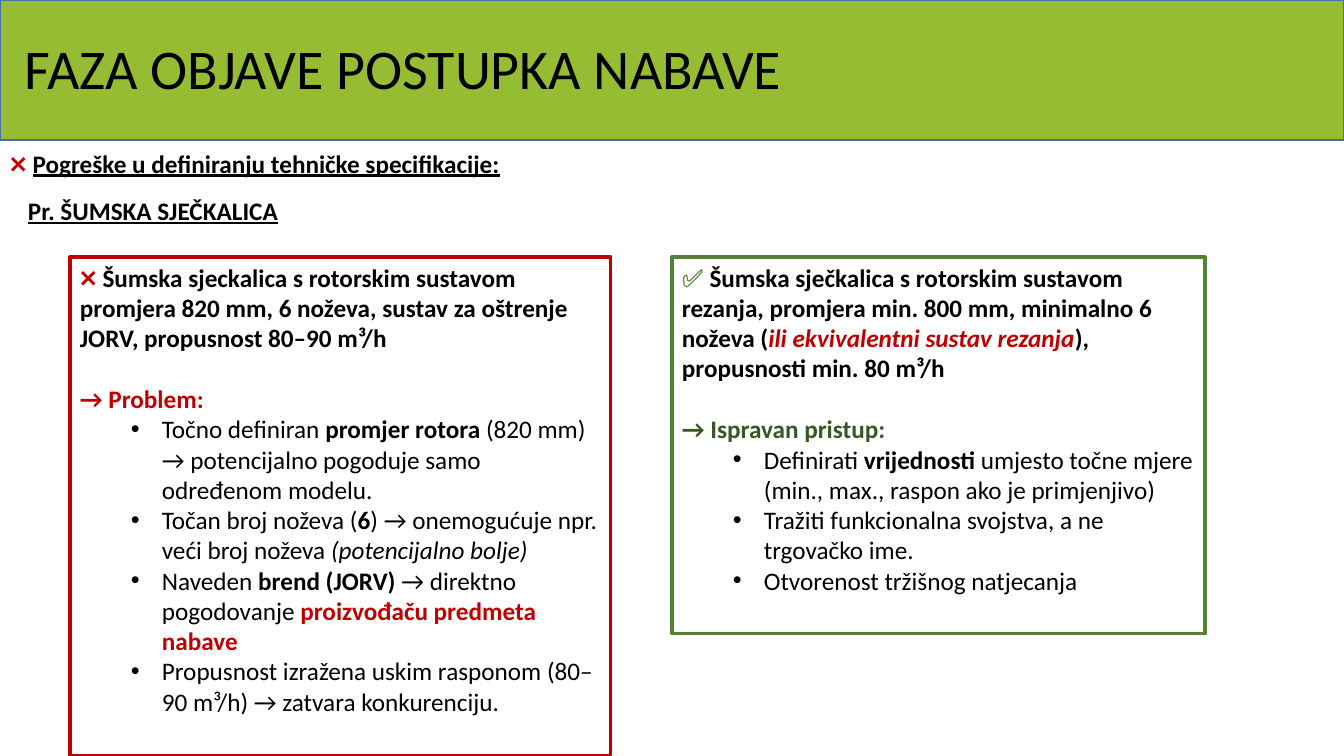
import pptx
import pptx.util
import pptx.dml.color
import pptx.enum.shapes
import pptx.enum.text
import pptx.oxml.ns
import lxml.etree

PX = 914400 / 100.8
FONT = "Calibri"
BLACK, RED, GREEN, DARK = "000000", "C00000", "548235", "385723"

TITLE = [("FAZA OBJAVE POSTUPKA NABAVE", "", BLACK)]
HEAD = [("❌ ", "b", RED),
        ("Pogreške u definiranju tehničke specifikacije:", "bu", BLACK)]
CASE = [("Pr. ŠUMSKA SJEČKALICA", "bu", BLACK)]

CARDS = [
    {
        "box": (70, 257, 541, 499),
        "line": RED,
        "lead": [("❌ ", "", RED),
                 ("Šumska sjeckalica s rotorskim sustavom promjera 820 mm, "
                  "6 noževa, sustav za oštrenje JORV, propusnost 80–90 m³/h", "b", BLACK)],
        "label": [("→ Problem:", "b", RED)],
        "items": [
            [("Točno definiran ", "", BLACK), ("promjer rotora", "b", BLACK),
             (" (820 mm) → potencijalno pogoduje samo određenom modelu.", "", BLACK)],
            [("Točan broj noževa (", "", BLACK), ("6", "b", BLACK),
             (") → onemogućuje npr. veći broj noževa ", "", BLACK),
             ("(potencijalno bolje)", "i", BLACK)],
            [("Naveden ", "", BLACK), ("brend (JORV)", "b", BLACK),
             (" → direktno pogodovanje ", "", BLACK),
             ("proizvođaču predmeta nabave", "b", RED)],
            [("Propusnost izražena uskim rasponom (80–90 m³/h) "
              "→ zatvara konkurenciju.", "", BLACK)],
        ],
    },
    {
        "box": (672, 257, 533, 377),
        "line": GREEN,
        "lead": [("✅ ", "", GREEN),
                 ("Šumska sječkalica s rotorskim sustavom rezanja, promjera "
                  "min. 800 mm, minimalno 6 noževa (", "b", BLACK),
                 ("ili ekvivalentni sustav rezanja", "bi", RED),
                 ("), propusnosti min. 80 m³/h", "b", BLACK)],
        "label": [("→ Ispravan pristup:", "b", DARK)],
        "items": [
            [("Definirati ", "", BLACK), ("vrijednosti ", "b", BLACK),
             ("umjesto točne mjere (min., max., raspon ako je primjenjivo)", "", BLACK)],
            [("Tražiti funkcionalna svojstva, a ne trgovačko ime.", "", BLACK)],
            [("Otvorenost tržišnog natjecanja", "", BLACK)],
        ],
    },
]


def emu(px):
    return pptx.util.Emu(round(px * PX))


def color(code):
    return pptx.dml.color.RGBColor.from_string(code)


def rect(box, line, width, fill=None):
    shape = slide.shapes.add_shape(
        pptx.enum.shapes.MSO_SHAPE.RECTANGLE, *map(emu, box))
    shape.shadow.inherit = False
    if fill:
        shape.fill.solid()
        shape.fill.fore_color.rgb = color(fill)
    else:
        shape.fill.background()
    shape.line.color.rgb = color(line)
    shape.line.width = pptx.util.Pt(width)
    return shape


def write(para, runs, size=18):
    para.alignment = pptx.enum.text.PP_ALIGN.LEFT
    for text, style, code in runs:
        run = para.add_run()
        run.text = text
        font = run.font
        font.name, font.size = FONT, pptx.util.Pt(size)
        font.bold, font.italic = "b" in style, "i" in style
        font.underline = "u" in style
        font.color.rgb = color(code)


def bullet(para):
    para.level = 1
    props = para._p.get_or_add_pPr()
    props.set("marL", str(emu(82)))
    props.set("indent", str(emu(-31)))
    for tag, key, value in (("a:buFont", "typeface", "Arial"), ("a:buChar", "char", "•")):
        part = lxml.etree.SubElement(props, pptx.oxml.ns.qn(tag))
        part.set(key, value)


def label(box, runs, size=18, wrap=False):
    frame = slide.shapes.add_textbox(*map(emu, box)).text_frame
    frame.word_wrap = wrap
    write(frame.paragraphs[0], runs, size)
    return frame


def card(data):
    frame = rect(data["box"], data["line"], 2.25).text_frame
    frame.word_wrap = True
    frame.vertical_anchor = pptx.enum.text.MSO_ANCHOR.TOP
    write(frame.paragraphs[0], data["lead"])
    para = frame.add_paragraph()
    para.space_before = pptx.util.Pt(22)
    write(para, data["label"])
    for runs in data["items"]:
        para = frame.add_paragraph()
        bullet(para)
        write(para, runs)


deck = pptx.Presentation()
deck.slide_width, deck.slide_height = emu(1344), emu(756)
slide = deck.slides.add_slide(deck.slide_layouts[6])

rect((0, 0, 1344, 140), "43739E", 1, "96BC33")
for data in CARDS:
    card(data)
title = label((15, 26, 1270, 90), TITLE, 40, True)
title.vertical_anchor = pptx.enum.text.MSO_ANCHOR.MIDDLE
title.paragraphs[0].line_spacing = 0.9
label((18, 190, 275, 40), CASE)
label((0, 143, 535, 40), HEAD)

deck.save("out.pptx")
